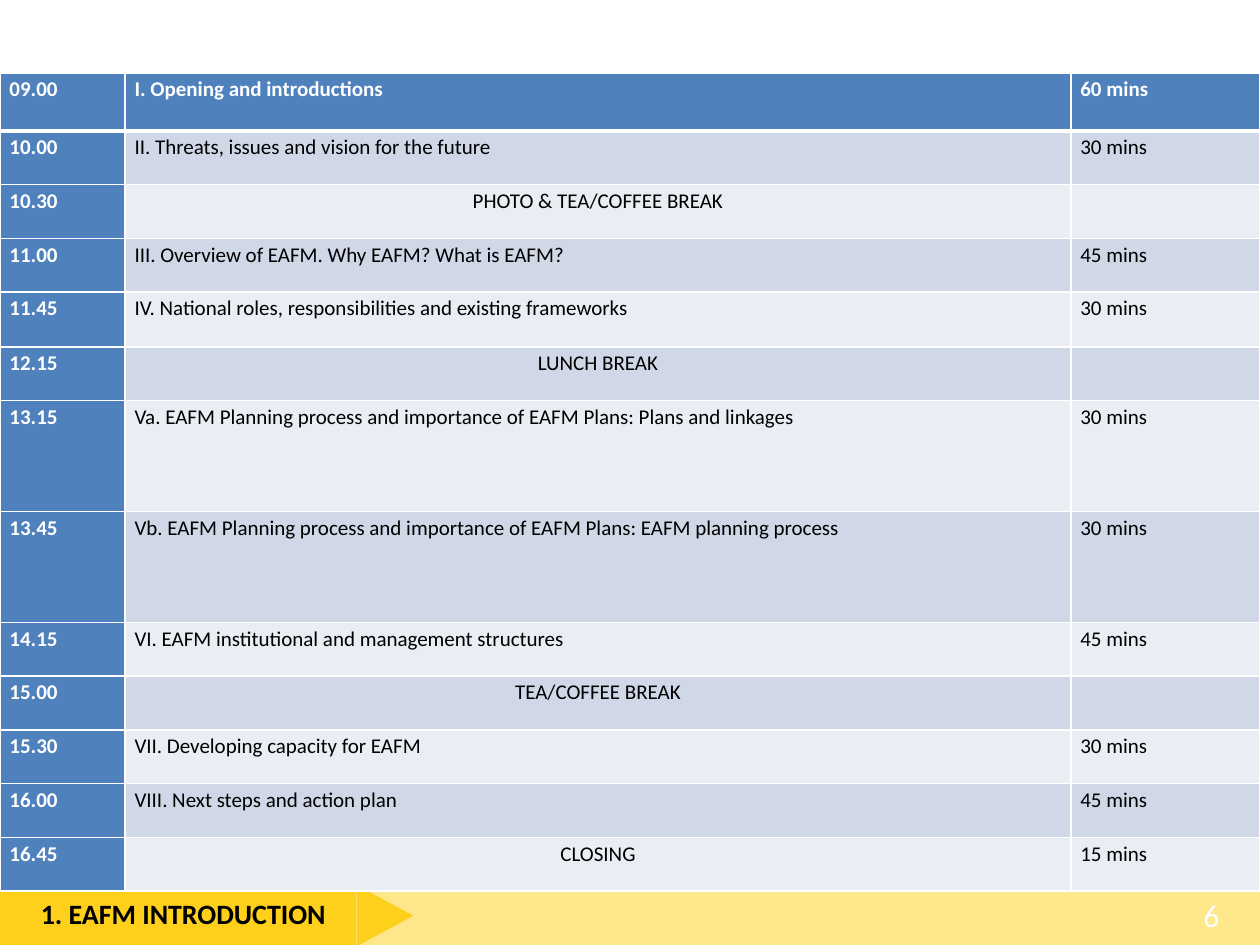
import pptx
import pptx.util
import pptx.dml.color
import pptx.enum.shapes
import pptx.enum.text
import pptx.oxml
import pptx.oxml.ns

Pt = pptx.util.Pt
ALIGN = pptx.enum.text.PP_ALIGN
SHAPE = pptx.enum.shapes.MSO_SHAPE
COLORS = {
    "blue": "4F81BD",
    "band_dark": "D0D8E8",
    "band_light": "E9EDF4",
    "yellow": "FFD01B",
    "white": "FFFFFF",
    "black": "000000",
}


def rgb(name):
    return pptx.dml.color.RGBColor.from_string(COLORS[name])


def write_text(frame, text, size=12, color="black", bold=False, align=ALIGN.LEFT, spacing=None):
    paragraph = frame.paragraphs[0]
    paragraph.alignment = align
    paragraph.line_spacing = spacing
    run = paragraph.add_run()
    run.text = text
    run.font.name = "Calibri"
    run.font.size = Pt(size)
    run.font.bold = bold
    run.font.color.rgb = rgb(color)


presentation = pptx.Presentation()
presentation.slide_width = Pt(720)
presentation.slide_height = Pt(540)
slide = presentation.slides.add_slide(presentation.slide_layouts[6])

# Footer banner: dark label, pale remainder, arrow tip
banner_top, banner_height, label_width = 505.5, 34.5, 203.75
banner_parts = [
    (SHAPE.RECTANGLE, 0, banner_top, label_width, banner_height, 0, 100),
    (SHAPE.RECTANGLE, label_width, banner_top, 720 - label_width, banner_height, 0, 50),
    (SHAPE.ISOSCELES_TRIANGLE, 202.5, 507, 35, 32.5, 90, 100),
]
for kind, left, top, width, height, rotation, opacity in banner_parts:
    shape = slide.shapes.add_shape(kind, Pt(left), Pt(top), Pt(width), Pt(height))
    shape.rotation = rotation
    shape.shadow.inherit = False
    shape.fill.solid()
    shape.fill.fore_color.rgb = rgb("yellow")
    shape.line.fill.background()
    if opacity < 100:
        color_element = shape.fill._xPr.find(".//" + pptx.oxml.ns.qn("a:srgbClr"))
        alpha = color_element.makeelement(pptx.oxml.ns.qn("a:alpha"), {"val": str(opacity * 1000)})
        color_element.append(alpha)

# Footer text: section name and page number
footer_texts = [
    ("1. EAFM INTRODUCTION", -7.2, 509, 224, 29.5, dict(size=16, bold=True, align=ALIGN.CENTER)),
    ("6", 680.5, 508.5, 39.5, 29, dict(size=18, color="white")),
]
for text, left, top, width, height, text_format in footer_texts:
    box = slide.shapes.add_textbox(Pt(left), Pt(top), Pt(width), Pt(height))
    box.text_frame.word_wrap = True
    write_text(box.text_frame, text, **text_format)

# Agenda: start time, session, duration
agenda = [
    ("09.00", "I. Opening and introductions", "60 mins"),
    ("10.00", "II. Threats, issues and vision for the future", "30 mins"),
    ("10.30", "PHOTO & TEA/COFFEE BREAK", ""),
    ("11.00", "III. Overview of EAFM. Why EAFM? What is EAFM?", "45 mins"),
    ("11.45", "IV. National roles, responsibilities and existing frameworks", "30 mins"),
    ("12.15", "LUNCH BREAK", ""),
    ("13.15", "Va. EAFM Planning process and importance of EAFM Plans: Plans and linkages", "30 mins"),
    ("13.45", "Vb. EAFM Planning process and importance of EAFM Plans: EAFM planning process", "30 mins"),
    ("14.15", "VI. EAFM institutional and management structures", "45 mins"),
    ("15.00", "TEA/COFFEE BREAK", ""),
    ("15.30", "VII. Developing capacity for EAFM", "30 mins"),
    ("16.00", "VIII. Next steps and action plan", "45 mins"),
    ("16.45", "CLOSING", "15 mins"),
]
row_heights = {0: 33.1, 4: 31.3, 6: 63.4, 7: 63.4}
table = slide.shapes.add_table(len(agenda), 3, 0, Pt(41.75), Pt(720), Pt(467)).table
for column, width in zip(table.columns, (71.5, 540.5, 108)):
    column.width = Pt(width)

for row_index, entry in enumerate(agenda):
    table.rows[row_index].height = Pt(row_heights.get(row_index, 30.7))
    band = "band_dark" if row_index % 2 else "band_light"
    for column_index, text in enumerate(entry):
        cell = table.cell(row_index, column_index)
        heading = row_index == 0 or column_index == 0
        cell.margin_left = cell.margin_right = Pt(5.4)
        cell.margin_top = cell.margin_bottom = 0

        # White borders, thicker under the first row
        properties = cell._tc.get_or_add_tcPr()
        thick_side = {0: "lnB", 1: "lnT"}.get(row_index)
        for side in ("lnL", "lnR", "lnT", "lnB"):
            width = Pt(3 if side == thick_side else 1)
            properties.append(pptx.oxml.parse_xml(
                f'<a:{side} {pptx.oxml.ns.nsdecls("a")} w="{width}"><a:solidFill>'
                f'<a:srgbClr val="{COLORS["white"]}"/></a:solidFill></a:{side}>'))
        cell.fill.solid()
        cell.fill.fore_color.rgb = rgb("blue" if heading else band)

        if text:
            centered = column_index == 1 and text.isupper()
            write_text(cell.text_frame, text, color="white" if heading else "black", bold=heading,
                       align=ALIGN.CENTER if centered else ALIGN.LEFT, spacing=1.15)

presentation.save("out.pptx")
